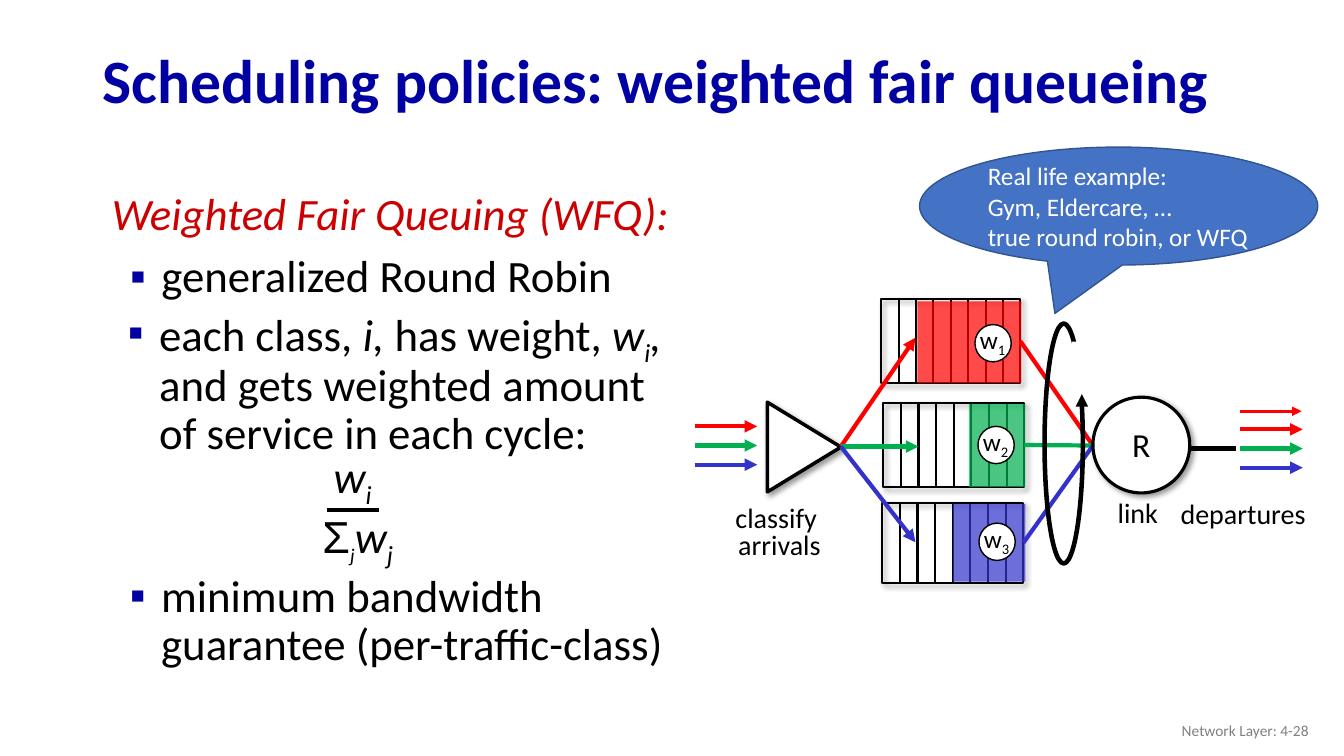
from lxml.etree import SubElement
from pptx import Presentation
from pptx.dml.color import RGBColor
from pptx.enum.shapes import MSO_CONNECTOR as LINK, MSO_SHAPE as SHAPE
from pptx.enum.text import MSO_ANCHOR as ANCHOR, MSO_AUTO_SIZE as AUTO, PP_ALIGN as ALIGN
from pptx.oxml.ns import qn
from pptx.util import Emu, Pt

EMU_PER_PX = 9144
COLORS = {
    "black": "000000", "white": "FFFFFF", "navy": "0000A3", "crimson": "CC0000",
    "red": "FF0000", "green": "00B050", "blue": "3333CC", "gray": "808080",
    "callout": "4472C4", "callout_edge": "325491",
}


def px(n):
    return Emu(round(n * EMU_PER_PX))


def rgb(name):
    return RGBColor.from_string(COLORS[name])


def assign(obj, values):
    for name, value in values.items():
        setattr(obj, name, value)


class Deck:
    font = "Calibri"
    list_format = {"line_spacing": 0.9, "space_before": Pt(10), "alignment": ALIGN.LEFT}
    label_format = {"line_spacing": 0.8, "alignment": ALIGN.CENTER}

    def __init__(self, width, height):
        self.prs = Presentation()
        assign(self.prs, {"slide_width": px(width), "slide_height": px(height)})
        self.slide = self.prs.slides.add_slide(self.prs.slide_layouts[1])
        self.shapes = self.slide.shapes

    def paragraph(self, p, runs, size, color="black", bold=False, fmt=None):
        assign(p, fmt or {})
        for text, flags, *extra in runs:
            r = p.add_run()
            r.text = text
            values = {"name": self.font, "size": Pt(size), "bold": bold, "italic": "i" in flags}
            assign(r.font, {**values, **(extra[0] if extra else {})})
            r.font.color.rgb = rgb(color)
            if "_" in flags:
                r.font._element.set("baseline", "-25000")

    def bullet(self, p, margin, indent, char=None):
        pPr = p._p.get_or_add_pPr()
        pPr.set("marL", str(px(margin)))
        pPr.set("indent", str(px(indent)))
        if char is None:
            SubElement(pPr, qn("a:buNone"))
            return
        clr = SubElement(pPr, qn("a:buClr"))
        SubElement(clr, qn("a:srgbClr"), val=COLORS["navy"])
        SubElement(pPr, qn("a:buFont"), typeface="Arial")
        SubElement(pPr, qn("a:buChar"), char=char)

    def bullet_item(self, p, runs):
        self.paragraph(p, runs, 32, fmt=self.list_format)
        self.bullet(p, 64, -31, "▪")

    def placeholder(self, idx, box, anchor):
        sp = self.slide.placeholders[idx]
        assign(sp, dict(zip(("left", "top", "width", "height"), map(px, box))))
        assign(sp.text_frame, {"word_wrap": True, "auto_size": AUTO.NONE, "vertical_anchor": anchor})
        return sp.text_frame

    def text_box(self, box, wrap=False, anchor=ANCHOR.TOP):
        tf = self.shapes.add_textbox(*map(px, box)).text_frame
        size = AUTO.NONE if wrap else AUTO.SHAPE_TO_FIT_TEXT
        assign(tf, {"word_wrap": wrap, "auto_size": size, "vertical_anchor": anchor})
        return tf

    def label(self, box, lines, size=20):
        tf = self.text_box(box)
        for n, line in enumerate(lines):
            p = tf.add_paragraph() if n else tf.paragraphs[0]
            self.paragraph(p, [(line, "")], size, fmt=self.label_format)

    def formula(self, box, runs, size):
        self.paragraph(self.text_box(box).paragraphs[0], runs, size)

    def shape(self, kind, box, fill=None, line=None, width=1.0, alpha=None, shadow=False):
        sp = self.shapes.add_shape(kind, *map(px, box))
        sp.shadow.inherit = False
        spPr = sp._element.spPr
        if fill:
            sp.fill.solid()
            sp.fill.fore_color.rgb = rgb(fill)
        else:
            sp.fill.background()
        if alpha:
            SubElement(spPr.find(".//" + qn("a:srgbClr")), qn("a:alpha"), val=str(alpha * 1000))
        if line:
            sp.line.color.rgb = rgb(line)
            sp.line.width = Pt(width)
        else:
            sp.line.fill.background()
        if shadow:
            outer = SubElement(spPr.find(qn("a:effectLst")), qn("a:outerShdw"),
                               blurRad=str(Pt(4)), dist=str(Pt(3)), dir="2700000",
                               algn="tl", rotWithShape="0")
            clr = SubElement(outer, qn("a:srgbClr"), val=COLORS["black"])
            SubElement(clr, qn("a:alpha"), val="40000")
        return sp

    def line(self, start, end, color="black", width=3.0, arrow=False, begin=None, finish=None):
        cx = self.shapes.add_connector(LINK.STRAIGHT, *map(px, (*start, *end)))
        cx.line.color.rgb = rgb(color)
        cx.line.width = Pt(width)
        spPr = cx._element.spPr
        if arrow:
            SubElement(spPr.find(qn("a:ln")), qn("a:tailEnd"), type="triangle")
        SubElement(spPr, qn("a:effectLst"))
        if begin:
            cx.begin_connect(*begin)
        if finish:
            cx.end_connect(*finish)

    def queue(self, box, filled_box, color, slots=8):
        left, top, width, height = box
        sp = self.shape(SHAPE.RECTANGLE, box, line="black", width=1.5, shadow=True)
        for n in range(1, slots):
            x = left + width * n / slots
            middle = 2 * n == slots
            self.line((x, top), (x, top + height), width=1.5,
                      begin=(sp, 0) if middle else None, finish=(sp, 2) if middle else None)
        self.shape(SHAPE.RECTANGLE, filled_box, fill=color, alpha=71)
        return sp


def build_text(deck):
    tf = deck.placeholder(0, (92, 34, 1150, 98), ANCHOR.MIDDLE)
    deck.paragraph(tf.paragraphs[0], [("Scheduling policies: weighted fair queueing", "")], 44,
                   "navy", True, {"line_spacing": 0.9, "alignment": ALIGN.LEFT})
    tf = deck.placeholder(1, (86, 185, 608, 122), ANCHOR.TOP)
    p = tf.paragraphs[0]
    deck.paragraph(p, [("Weighted Fair Queuing (WFQ):", "i")], 32, "crimson", fmt=deck.list_format)
    deck.bullet(p, 39, -24)
    deck.bullet_item(tf.add_paragraph(), [("generalized Round Robin", "")])

    weight_item = [("each class, ", ""), ("i, ", "i"), ("has weight, ", ""), ("w", "i"),
                   ("i", "i_"), (", ", "i"),
                   ("and gets weighted amount of service in each cycle:", "")]
    bandwidth_item = [("minimum bandwidth guarantee (per-traffic-class)", "")]
    for box, runs in (((84, 300, 608, 155), weight_item), ((86, 564, 608, 115), bandwidth_item)):
        deck.bullet_item(deck.text_box(box, wrap=True).paragraphs[0], runs)

    deck.formula((321, 440, 59, 64), [("w", "i"), ("i", "i_")], 32)
    deck.formula((310, 500, 93, 64), [("Σ", "", {"name": "Arial"}), ("j", "i_", {"size": Pt(24)}),
                                      ("w", "i"), ("j", "i_")], 32)
    deck.line((324, 506), (376, 506))

    tf = deck.text_box((1008, 705, 300, 40), wrap=True, anchor=ANCHOR.MIDDLE)
    deck.paragraph(tf.paragraphs[0], [("Network Layer: 4-28", "")], 11, "gray",
                   fmt={"alignment": ALIGN.RIGHT})


def build_diagram(deck):
    deck.line((1176, 445), (1226, 445))
    queues = [
        ("red", (874, 297, 138, 83), (910, 299, 103, 81), (908, 335), (967, 322)),
        ("green", (876, 400, 140, 83), (961, 401, 56, 82), (911, 443), (970, 423)),
        ("blue", (875, 499, 140, 79), (945, 500, 72, 77), (908, 538), (971, 519)),
    ]
    boxes = [deck.queue(box, filled, color) for color, box, filled, _, _ in queues]

    classifier = deck.shape(SHAPE.ISOSCELES_TRIANGLE, (753, 407, 89, 73), "white", "black", 2.5,
                            shadow=True)
    classifier.rotation = 90
    for n, (color, *_) in enumerate(queues):
        for x, y in ((689, 423), (1230, 426)):
            deck.line((x, y + 19 * n), (x + 62, y + 19 * n), color, arrow=True)
    deck.line((1230, 408), (1291, 408), "red", 2.25, arrow=True)

    for sp, (color, _, _, entry, _) in zip(boxes, queues):
        deck.line((834, 443), entry, color, arrow=True)
        deck.line((1015, 442), (1084, 442), color, begin=(sp, 3))

    deck.shape(SHAPE.OVAL, (1084, 394, 96, 95), "white", "black", 2.25, shadow=True)
    deck.label((719, 498, 108, 65), ["classify ", "arrivals"])
    deck.label((1160, 494, 146, 38), ["departures"])
    deck.label((1098, 493, 61, 38), ["link"])
    deck.label((1113, 423, 38, 43), ["R"], 24)

    deck.shape(SHAPE.OVAL, (1036, 321, 38, 238), line="black", width=3.25)
    deck.shape(SHAPE.RECTANGLE, (1063, 339, 21, 64), "white")
    deck.line((1073, 419), (1073, 391), arrow=True)

    for n, (*_, (x, y)) in enumerate(queues, 1):
        deck.shape(SHAPE.OVAL, (x, y, 36, 37), "white", "black")
        deck.formula((x - 5, y - 5, 47, 40), [("w", ""), (str(n), "_")], 18)


def build_callout(deck):
    sp = deck.shape(SHAPE.OVAL_CALLOUT, (912, 146, 395, 117), "callout", "callout_edge")
    sp.adjustments[0], sp.adjustments[1] = -0.16, 0.91
    tf = sp.text_frame
    assign(tf, {"word_wrap": True, "vertical_anchor": ANCHOR.MIDDLE, "margin_right": 0})
    lines = ["Real life example:", "Gym, Eldercare, …", "true round robin, or WFQ"]
    for n, line in enumerate(lines):
        p = tf.add_paragraph() if n else tf.paragraphs[0]
        deck.paragraph(p, [(line, "")], 18, "white", fmt={"alignment": ALIGN.LEFT})


def main():
    deck = Deck(1333, 750)
    build_text(deck)
    build_diagram(deck)
    build_callout(deck)
    deck.prs.save("out.pptx")


if __name__ == "__main__":
    main()
